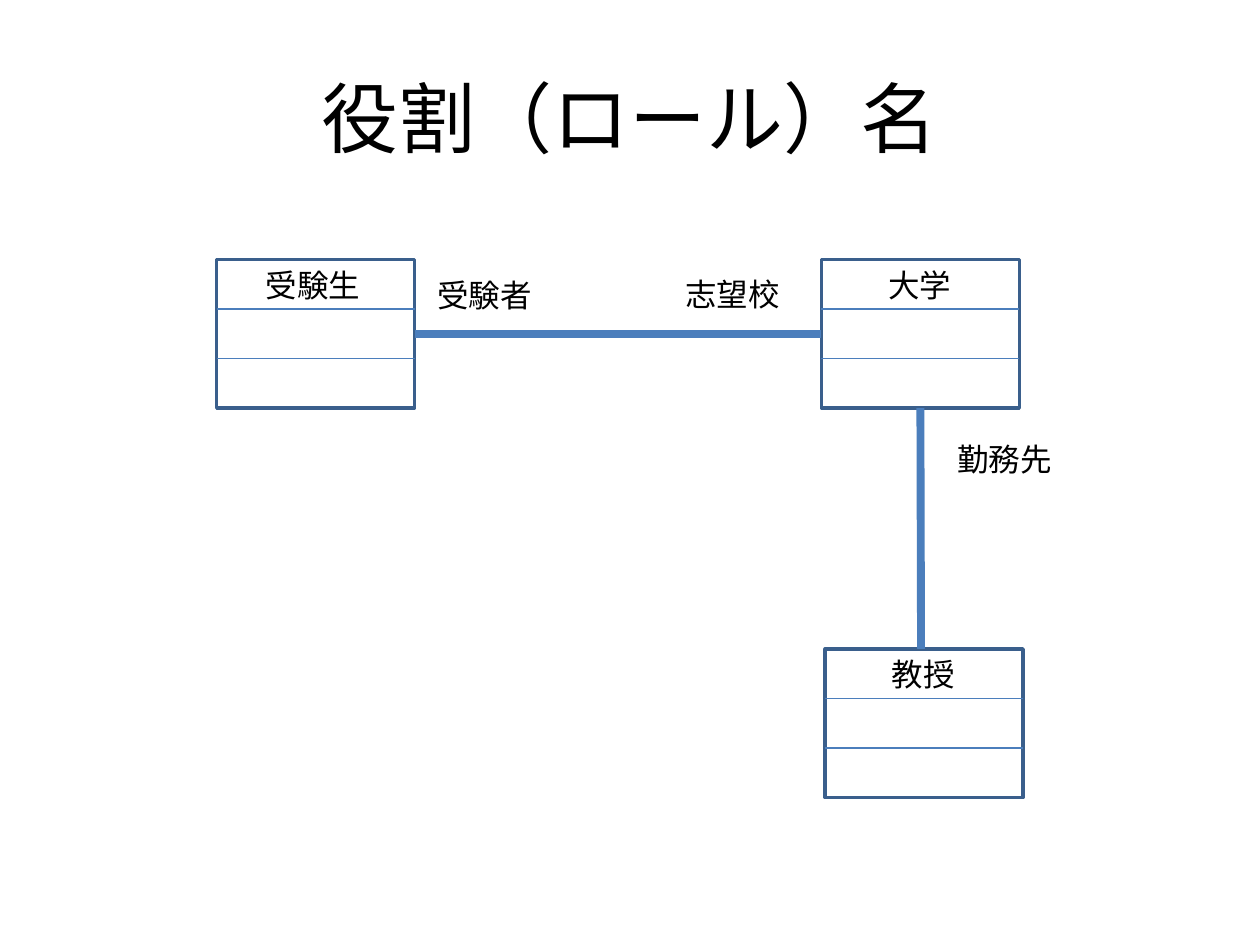
from pptx import Presentation
from pptx.dml.color import RGBColor
from pptx.enum.shapes import MSO_CONNECTOR, MSO_SHAPE
from pptx.enum.text import MSO_ANCHOR, MSO_AUTO_SIZE, PP_ALIGN
from pptx.oxml.ns import qn
from pptx.util import Inches, Pt
from lxml.etree import SubElement

BLACK = RGBColor(0x00, 0x00, 0x00)
BORDER_BLUE = RGBColor(0x3A, 0x5F, 0x8C)
LINE_BLUE = RGBColor(0x4B, 0x7E, 0xBC)
FONT = "Calibri"
BOX_WIDTH, BOX_HEIGHT = 1.57, 1.18

prs = Presentation()
prs.slide_width, prs.slide_height = Inches(10), Inches(7.5)
slide = prs.slides.add_slide(prs.slide_layouts[5])


def add_line(x1, y1, x2, y2, weight):
    line = slide.shapes.add_connector(
        MSO_CONNECTOR.STRAIGHT, Inches(x1), Inches(y1), Inches(x2), Inches(y2))
    line.line.color.rgb = LINE_BLUE
    line.line.width = Pt(weight)
    SubElement(line._element.spPr, qn("a:effectLst"))
    return line


def add_label(text, left, top, width):
    label = slide.shapes.add_textbox(
        Inches(left), Inches(top), Inches(width), Inches(0.4))
    frame = label.text_frame
    frame.word_wrap = True
    frame.auto_size = MSO_AUTO_SIZE.SHAPE_TO_FIT_TEXT
    frame.text = text
    font = frame.paragraphs[0].runs[0].font
    font.name, font.size, font.color.rgb = FONT, Pt(18), BLACK


title = slide.shapes.title
title.left, title.top = Inches(0.5), Inches(0.3)
title.width, title.height = Inches(9), Inches(1.25)
title.text_frame.text = "役割（ロール）名"
title.text_frame.vertical_anchor = MSO_ANCHOR.MIDDLE
heading = title.text_frame.paragraphs[0]
heading.alignment = PP_ALIGN.CENTER
heading_font = heading.runs[0].font
heading_font.name, heading_font.size, heading_font.color.rgb = FONT, Pt(44), BLACK

# Class boxes: name, left, top, offset of the name from the left side
classes = [
    ("受験生", 1.72, 2.06, 0.29),
    ("大学", 6.52, 2.06, 0.43),
    ("教授", 6.55, 5.15, 0.43),
]
class_boxes = {}
for name, left, top, name_offset in classes:
    box = slide.shapes.add_shape(
        MSO_SHAPE.RECTANGLE, Inches(left), Inches(top),
        Inches(BOX_WIDTH), Inches(BOX_HEIGHT))
    box.shadow.inherit = False
    box.fill.background()
    box.line.color.rgb = BORDER_BLUE
    box.line.width = Pt(2)
    for third in (1, 2):
        divider_y = top + BOX_HEIGHT * third / 3
        add_line(left, divider_y, left + BOX_WIDTH, divider_y, 0.75)
    add_label(name, left + name_offset, top, 0.99)
    class_boxes[name] = box

application = add_line(3.29, 2.65, 6.52, 2.65, 4.5)
application.begin_connect(class_boxes["受験生"], 3)
application.end_connect(class_boxes["大学"], 1)

# The professor box sits slightly to the right, so only the upper end is joined
employment = add_line(7.31, 3.24, 7.31, 5.15, 4.5)
employment.begin_connect(class_boxes["大学"], 2)

roles = [("受験者", 3.37, 2.14), ("志望校", 5.34, 2.13), ("勤務先", 7.5, 3.44)]
for role, left, top in roles:
    add_label(role, left, top, 1.02)

prs.save("out.pptx")
